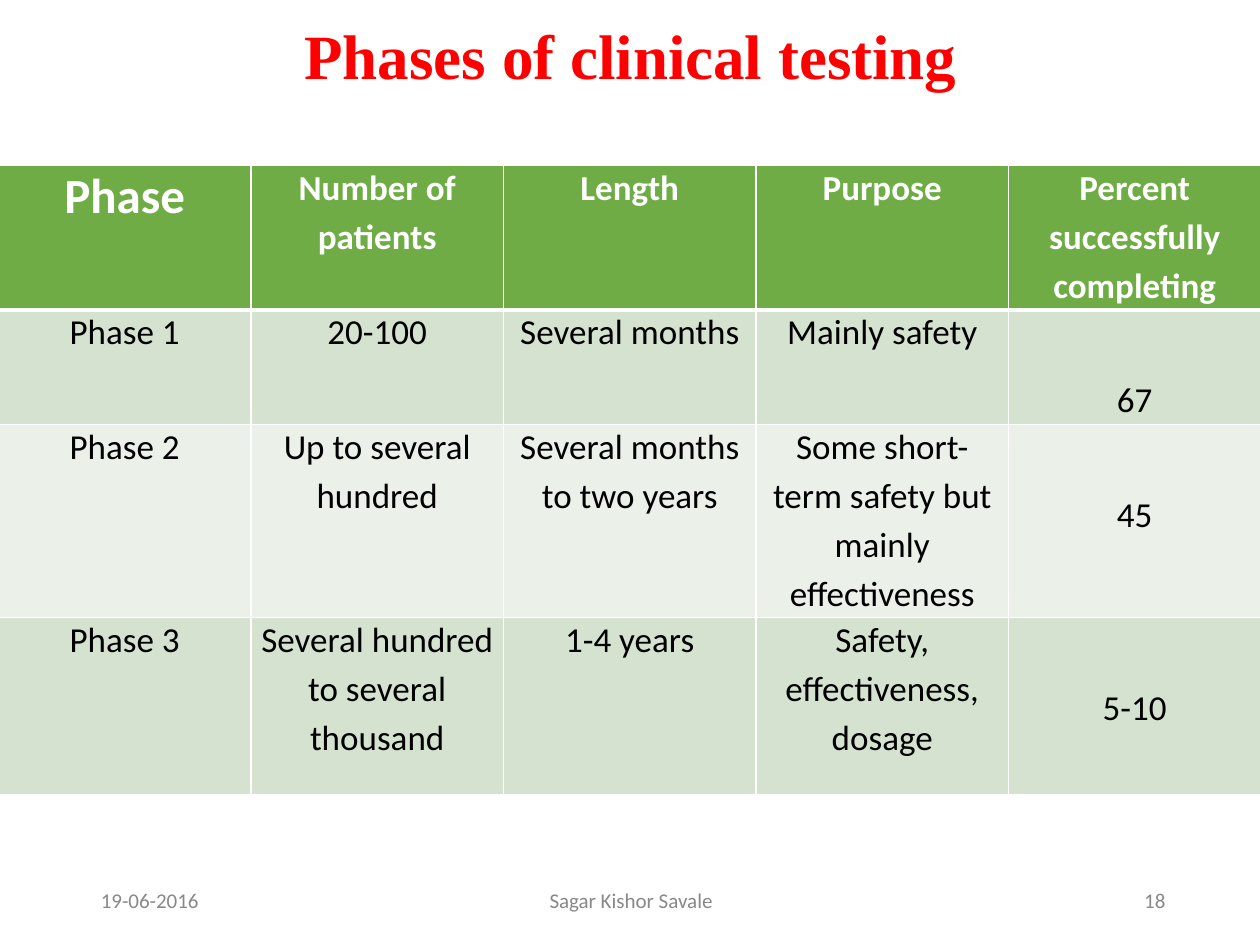
from lxml.etree import SubElement
from pptx import Presentation
from pptx.dml.color import RGBColor
from pptx.enum.text import MSO_ANCHOR, PP_ALIGN
from pptx.oxml.ns import qn
from pptx.util import Cm, Pt

TITLE = "Phases of clinical testing"
HEADER = ["Phase", "Number of\npatients", "Length", "Purpose",
          "Percent\nsuccessfully\ncompleting"]
PHASES = [
    ["Phase 1", "20-100", "Several months", "Mainly safety", "67"],
    ["Phase 2", "Up to several\nhundred", "Several months\nto two years",
     "Some short-\nterm safety but\nmainly\neffectiveness", "45"],
    ["Phase 3", "Several hundred\nto several\nthousand", "1-4 years",
     "Safety,\neffectiveness,\ndosage", "5-10"],
]
# text, left, width (cm)
FOOTERS = [("19-06-2016", 1.99, 2.06),
           ("Sagar Kishor Savale", 11.05, 3.35),
           ("18", 22.96, 0.64)]
ROW_HEIGHTS = [2.92, 2.31, 3.89, 3.58]
COLUMN_WIDTH = 5.09
TABLE_LEFT, TABLE_TOP = -0.03, 3.33
CELL_TOP, PERCENT_TOP = 0.03, 1.4

THEME = {
    "title": {"name": "Times New Roman", "size": Pt(36), "bold": True, "color": "FF0000"},
    "corner": {"name": "Calibri", "size": Pt(28), "bold": True, "color": "FFFFFF"},
    "header": {"name": "Calibri", "size": Pt(20), "bold": True, "color": "FFFFFF"},
    "body": {"name": "Calibri", "size": Pt(20), "bold": False, "color": "000000"},
    "footer": {"name": "Calibri", "size": Pt(12), "bold": False, "color": "888888"},
    "header_fill": "6FAC46",
    "band_fills": ["D4E2CF", "EBF0E9"],
    "border": "FFFFFF",
}


def set_values(target, values):
    for name, value in values.items():
        setattr(target, name, value)


def write_lines(frame, text, style, align, first_gap=0, line_gap=0, **spacing):
    """Put each line of text in its own paragraph."""
    for index, line in enumerate(text.split("\n")):
        para = frame.add_paragraph() if index else frame.paragraphs[0]
        set_values(para, {"alignment": align,
                          "space_before": Pt(line_gap if index else first_gap),
                          **spacing})
        span = para.add_run()
        span.text = line
        for name, value in THEME[style].items():
            if name == "color":
                span.font.color.rgb = RGBColor.from_string(value)
            else:
                setattr(span.font, name, value)


def format_frame(frame, wrap):
    set_values(frame, {"margin_left": 0, "margin_right": 0, "margin_top": 0,
                       "margin_bottom": 0, "word_wrap": wrap,
                       "vertical_anchor": MSO_ANCHOR.TOP})


def add_borders(cell, widths):
    properties = cell._tc.get_or_add_tcPr()
    for index, (side, width) in enumerate(widths.items()):
        line = SubElement(properties, qn(f"a:ln{side}"), w=str(Pt(width)))
        fill = SubElement(line, qn("a:solidFill"))
        SubElement(fill, qn("a:srgbClr"), val=THEME["border"])
        properties.insert(index, line)


def add_title(page):
    title = page.shapes.title
    set_values(title, {"left": Cm(6.1), "top": Cm(0.33),
                       "width": Cm(13.23), "height": Cm(1.6)})
    format_frame(title.text_frame, False)
    write_lines(title.text_frame, TITLE, "title", PP_ALIGN.CENTER, 1)


def add_phase_table(page):
    rows = [HEADER, *PHASES]
    columns = len(HEADER)
    table = page.shapes.add_table(
        len(rows), columns, Cm(TABLE_LEFT), Cm(TABLE_TOP),
        Cm(COLUMN_WIDTH * columns), Cm(sum(ROW_HEIGHTS))).table
    set_values(table, {"first_row": False, "horz_banding": False})
    for column in table.columns:
        column.width = Cm(COLUMN_WIDTH)
    for r, texts in enumerate(rows):
        table.rows[r].height = Cm(ROW_HEIGHTS[r])
        color = THEME["band_fills"][(r - 1) % 2] if r else THEME["header_fill"]
        for c, text in enumerate(texts):
            cell = table.cell(r, c)
            is_percent = r > 0 and c == columns - 1
            set_values(cell, {
                "margin_left": 0, "margin_right": 0, "margin_bottom": 0,
                "margin_top": Cm(PERCENT_TOP if is_percent else CELL_TOP),
                "vertical_anchor": MSO_ANCHOR.TOP})
            cell.fill.solid()
            cell.fill.fore_color.rgb = RGBColor.from_string(color)
            add_borders(cell, {"L": 1, "R": 1, "T": 3 if r == 1 else 1,
                               "B": 3 if r == 0 else 1})
            style = "body" if r else "header" if c else "corner"
            write_lines(cell.text_frame, text, style, PP_ALIGN.CENTER, 0.8, 3.6)


def add_footers(page):
    for text, left, width in FOOTERS:
        box = page.shapes.add_textbox(Cm(left), Cm(17.96), Cm(width), Cm(0.51))
        format_frame(box.text_frame, False)
        write_lines(box.text_frame, text, "footer", PP_ALIGN.CENTER,
                    line_spacing=Pt(12.4))


def main():
    deck = Presentation()
    set_values(deck, {"slide_width": Cm(25.4), "slide_height": Cm(19.05)})
    page = deck.slides.add_slide(deck.slide_layouts.get_by_name("Title Only"))
    add_title(page)
    add_phase_table(page)
    add_footers(page)
    deck.save("out.pptx")


if __name__ == "__main__":
    main()
